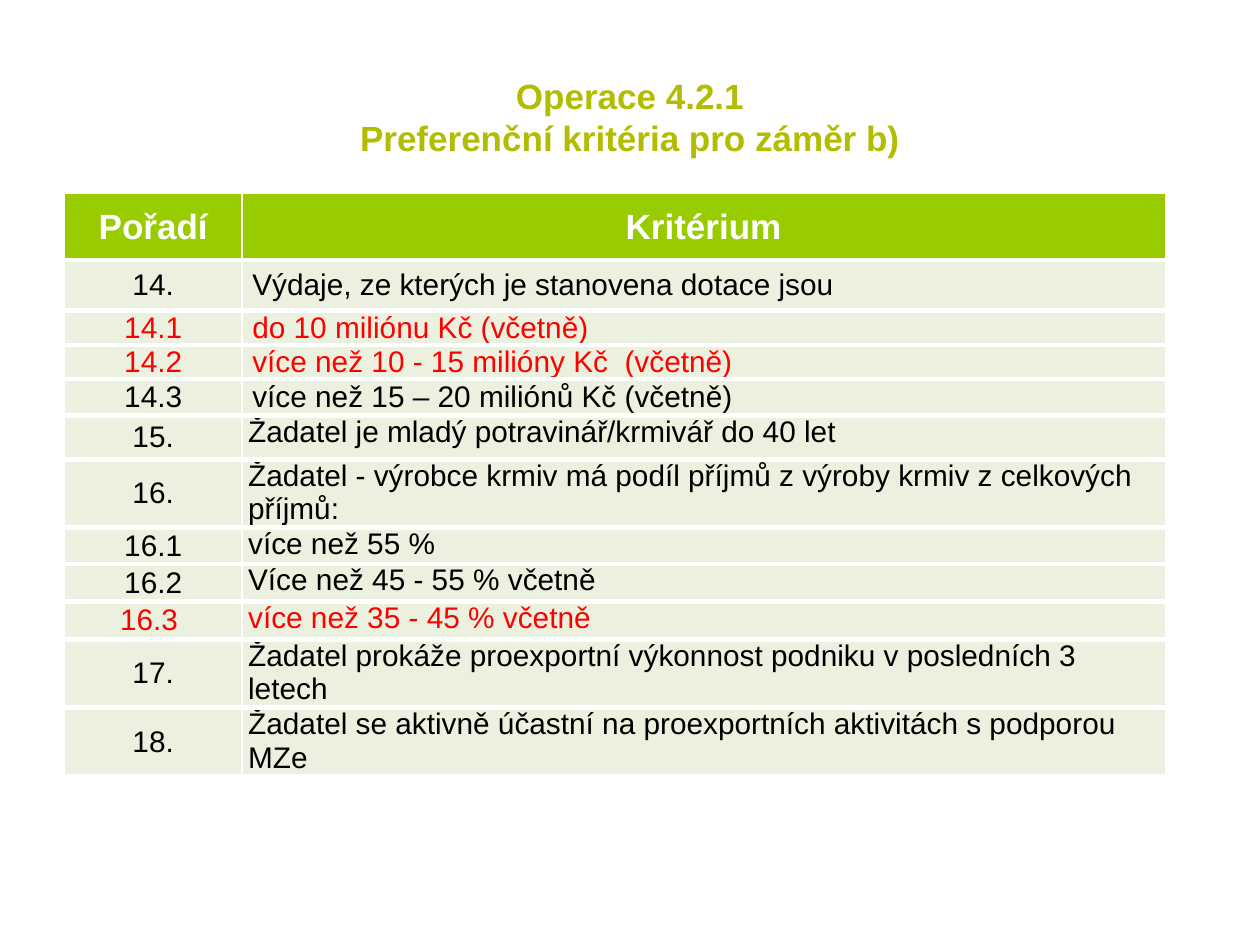
from dataclasses import dataclass

import pptx
import pptx.dml.color
import pptx.enum.text
import pptx.oxml.ns
import pptx.util
from lxml import etree

Pt = pptx.util.Pt
PP_ALIGN = pptx.enum.text.PP_ALIGN
ANCHOR = pptx.enum.text.MSO_ANCHOR

COLORS = {
    "title": "B2BC00",
    "header": "99CC00",
    "body": "EBF1DE",
    "white": "FFFFFF",
    "black": "000000",
    "red": "FF0000",
}
THIN, THICK = 0.91, 2.95


@dataclass(frozen=True)
class Criterion:
    number: str
    text: str
    height: float
    color: str = "black"
    inset: float = 3.6
    anchor: ANCHOR = ANCHOR.TOP


@dataclass(frozen=True)
class CellStyle:
    fill: str
    color: str
    size: float
    bold: bool
    align: PP_ALIGN
    anchor: ANCHOR
    inset_x: float
    inset_y: float = 0
    top: float = THICK
    line_spacing: float = 1.0


CRITERIA = [
    Criterion("14.", "Výdaje, ze kterých je stanovena dotace jsou", 28.8, "black", 6, ANCHOR.MIDDLE),
    Criterion("14.1", "do 10 miliónu Kč (včetně)", 19.6, "red", 6, ANCHOR.MIDDLE),
    Criterion("14.2", "více než 10 - 15 milióny Kč  (včetně)", 19.6, "red", 6, ANCHOR.MIDDLE),
    Criterion("14.3", "více než 15 – 20 miliónů Kč (včetně)", 20.7, "black", 6, ANCHOR.MIDDLE),
    Criterion("15.", "Žadatel je mladý potravinář/krmivář do 40 let", 25.2),
    Criterion("16.", "Žadatel - výrobce krmiv má podíl příjmů z výroby krmiv z celkových příjmů:", 39),
    Criterion("16.1", "více než 55 %", 20.7),
    Criterion("16.2", "Více než 45 - 55 % včetně", 21.6),
    Criterion("16.3 ", "více než 35 - 45 % včetně", 21.6, "red"),
    Criterion("17.", "Žadatel prokáže proexportní výkonnost podniku v posledních 3 letech", 39),
    Criterion("18.", "Žadatel se aktivně účastní na proexportních aktivitách s podporou MZe", 39),
]


def rgb(name: str) -> pptx.dml.color.RGBColor:
    return pptx.dml.color.RGBColor.from_string(COLORS[name])


def set_attrs(obj, values: dict) -> None:
    for name, value in values.items():
        setattr(obj, name, value)


def format_font(font, size: float, bold: bool, color: str) -> None:
    set_attrs(font, {"name": "Arial", "size": Pt(size), "bold": bold})
    font.color.rgb = rgb(color)


def add_borders(cell, widths: dict[str, float]) -> None:
    qn = pptx.oxml.ns.qn
    tcPr = cell._tc.get_or_add_tcPr()
    for i, (tag, width) in enumerate(widths.items()):
        ln = etree.Element(qn(f"a:{tag}"), w=str(int(Pt(width))))
        fill = etree.SubElement(ln, qn("a:solidFill"))
        etree.SubElement(fill, qn("a:srgbClr"), val=COLORS["white"])
        tcPr.insert(i, ln)


def fill_cell(cell, text: str, style: CellStyle) -> None:
    set_attrs(cell, {
        "vertical_anchor": style.anchor,
        "margin_left": Pt(style.inset_x),
        "margin_right": Pt(style.inset_x),
        "margin_top": Pt(style.inset_y),
        "margin_bottom": Pt(style.inset_y),
    })
    cell.fill.solid()
    cell.fill.fore_color.rgb = rgb(style.fill)
    add_borders(cell, {"lnL": THIN, "lnR": THIN, "lnT": style.top, "lnB": THICK})
    p = cell.text_frame.paragraphs[0]
    set_attrs(p, {"alignment": style.align, "line_spacing": style.line_spacing})
    r = p.add_run()
    r.text = text
    format_font(r.font, style.size, style.bold, style.color)


def add_title(s) -> None:
    sp = s.shapes.title
    set_attrs(sp, {"left": Pt(36), "top": Pt(21.6), "width": Pt(648), "height": Pt(90)})
    tf = sp.text_frame
    set_attrs(tf, {"vertical_anchor": ANCHOR.MIDDLE, "word_wrap": True})
    p = tf.paragraphs[0]
    p.text = "Operace 4.2.1\vPreferenční kritéria pro záměr b)"
    p.alignment = PP_ALIGN.CENTER
    for r in p.runs:
        format_font(r.font, 20, True, "title")


def add_criteria_table(s) -> None:
    heights = [38.2] + [c.height for c in CRITERIA]
    widths = [101.3, 527.7]
    table = s.shapes.add_table(
        len(heights), len(widths), Pt(36.9), Pt(110.5), Pt(sum(widths)), Pt(sum(heights))
    ).table
    for col, width in zip(table.columns, widths):
        col.width = Pt(width)
    for row, height in zip(table.rows, heights):
        row.height = Pt(height)

    header = CellStyle("header", "white", 20, True, PP_ALIGN.CENTER, ANCHOR.MIDDLE,
                       7.2, 3.6, THIN, 1.01)
    for i, text in enumerate(["Pořadí", "Kritérium"]):
        fill_cell(table.cell(0, i), text, header)
    for i, c in enumerate(CRITERIA, 1):
        number = CellStyle("body", c.color, 17, False, PP_ALIGN.CENTER, ANCHOR.MIDDLE, 6)
        text = CellStyle("body", c.color, 17, False, PP_ALIGN.LEFT, c.anchor, c.inset)
        fill_cell(table.cell(i, 0), c.number, number)
        fill_cell(table.cell(i, 1), c.text, text)


def main() -> None:
    prs = pptx.Presentation()
    set_attrs(prs, {"slide_width": Pt(720), "slide_height": Pt(540)})
    s = prs.slides.add_slide(prs.slide_layouts[5])
    add_title(s)
    add_criteria_table(s)
    prs.save("out.pptx")


if __name__ == "__main__":
    main()
